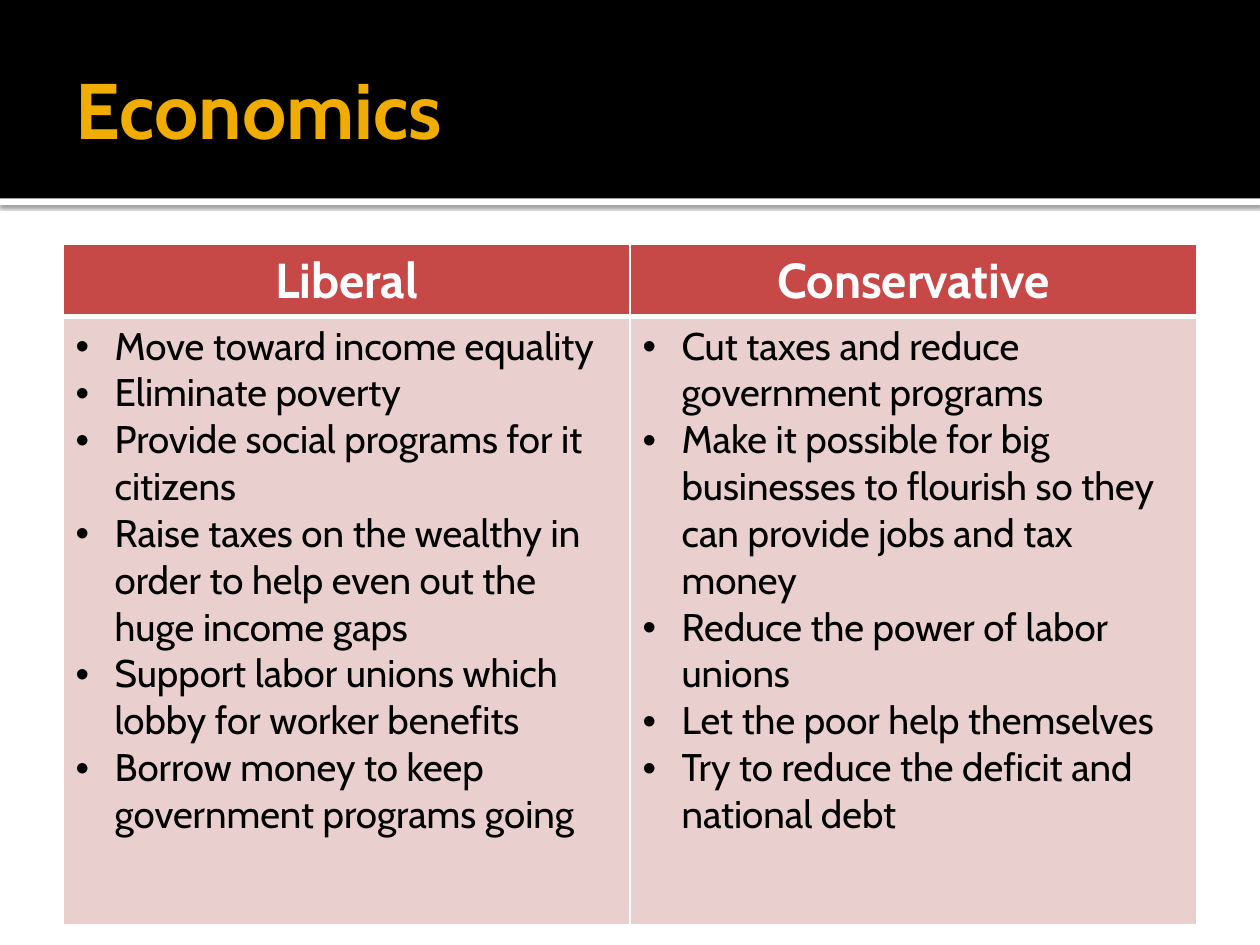
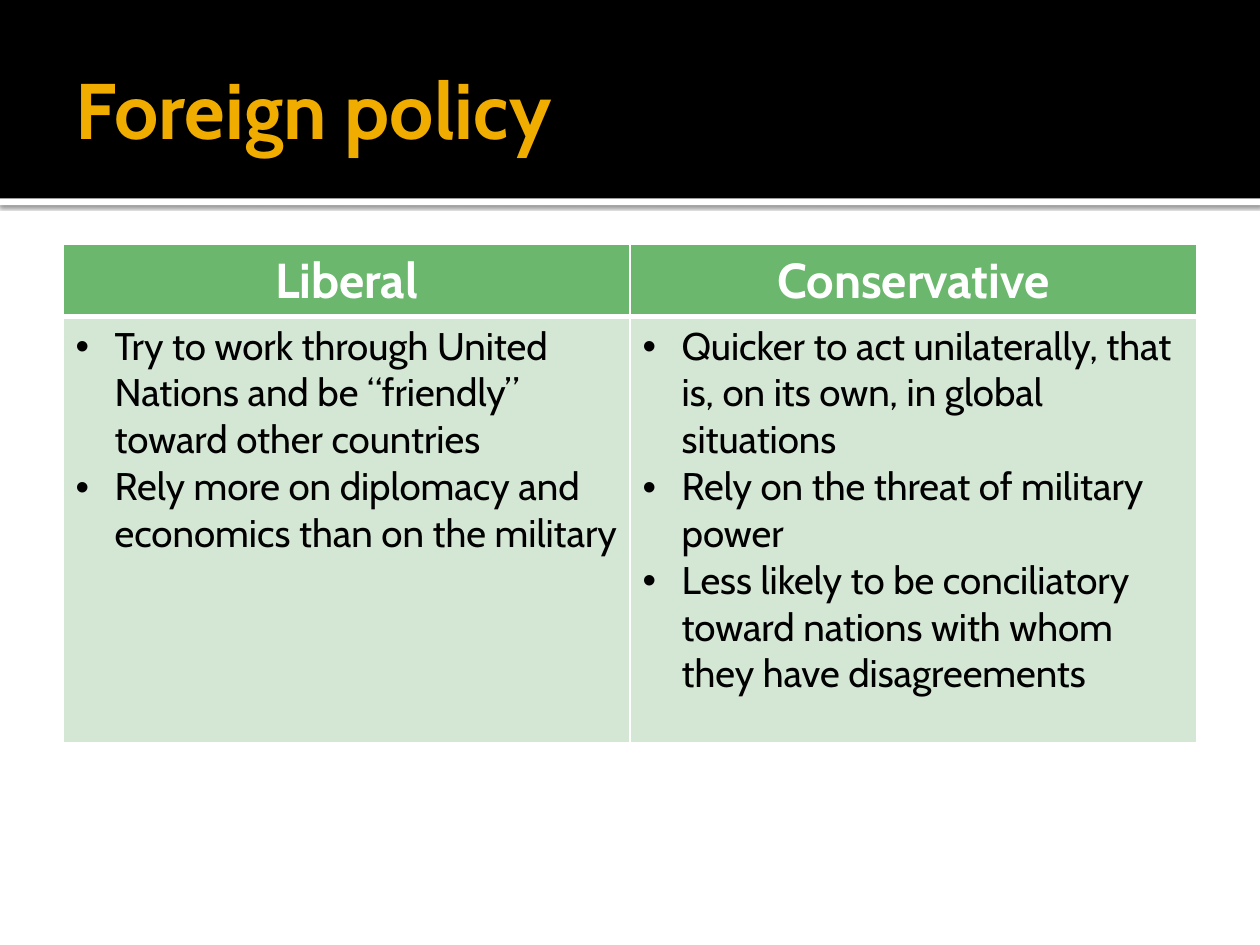
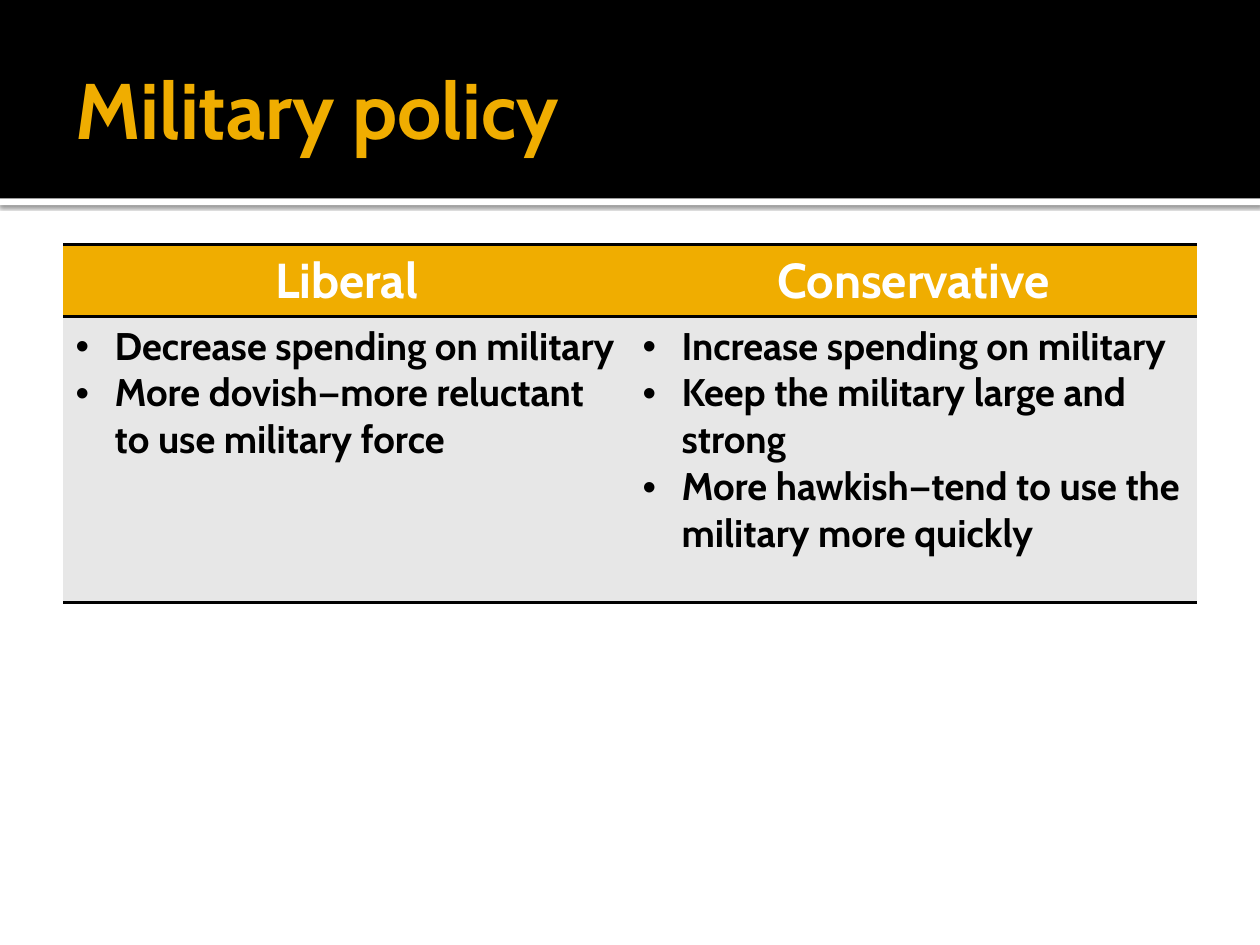
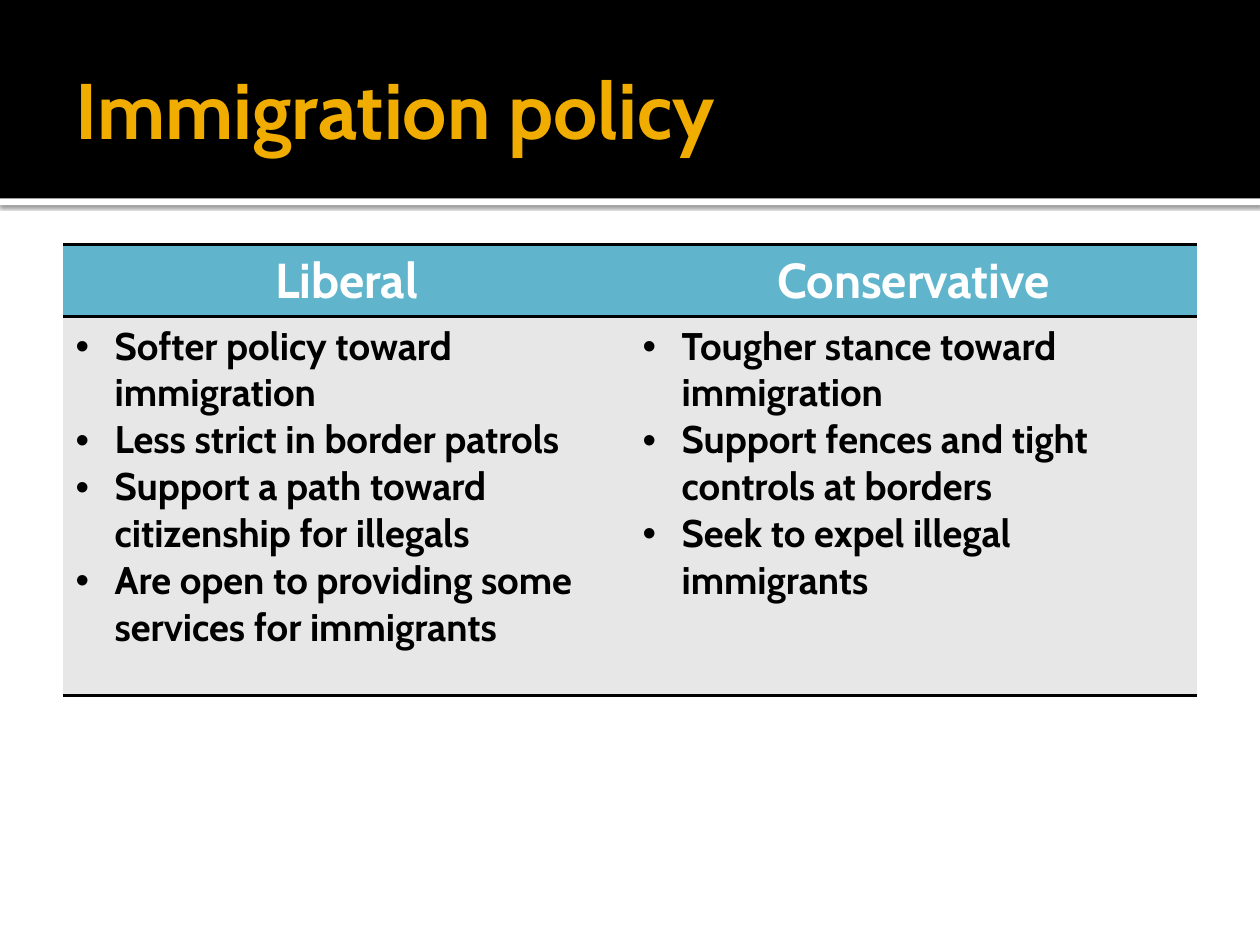
from lxml import etree
from pptx import Presentation
from pptx import util as u
from pptx.dml import color
from pptx.enum import shapes, text
from pptx.oxml import ns

WIDTH, HEIGHT = u.Inches(10), u.Inches(7.5)
FONT = "Cabin"
HEX = {
    "black": "000000", "white": "FFFFFF", "gold": "F0AD00",
    "red": "C64847", "pink": "EACFCF", "green": "6BB76D", "mint": "D4E6D4",
    "blue": "60B5CC", "grey": "E7E7E7",
}
MARGIN = 0.05
BAND = 0.21
TABLE_TOP = u.Inches(1.94)
HEADER_ROW = u.Inches(0.57)
INDENT = u.Inches(0.31)
SIDES = ("L", "R", "T", "B")
HEADINGS = ("Liberal", "Conservative")

TITLE_TEXT = {"size": u.Pt(45), "bold": True, "color": "gold"}
HEADER_TEXT = {"size": u.Pt(28), "bold": True, "color": "white"}
PLAIN_TEXT = {"size": u.Pt(22), "bold": False, "color": "black"}
BOLD_TEXT = {**PLAIN_TEXT, "bold": True}

THIN, THICK, RULE = ("white", 1), ("white", 3), ("black", 2)
GRID_LOOK = {
    "text": PLAIN_TEXT,
    "header": dict(zip(SIDES, (THIN, THIN, THIN, THICK))),
    "body": dict(zip(SIDES, (THIN, THIN, THICK, THIN))),
}
RULED_LOOK = {
    "text": BOLD_TEXT,
    "header": {"T": RULE, "B": RULE},
    "body": {"T": RULE, "B": RULE},
}

TOPICS = [
    {
        "title": "Economics", "look": GRID_LOOK, "fills": ("red", "pink"),
        "body_row": 4.83,
        "points": (
            ["Move toward income equality",
             "Eliminate poverty",
             "Provide social programs for it citizens",
             "Raise taxes on the wealthy in order to help even out the huge income gaps",
             "Support labor unions which lobby for worker benefits",
             "Borrow money to keep government programs going"],
            ["Cut taxes and reduce government programs",
             "Make it possible for big businesses to flourish so they can "
             "provide jobs and tax money",
             "Reduce the power of labor unions",
             "Let the poor help themselves",
             "Try to reduce the deficit and national debt"],
        ),
    },
    {
        "title": "Foreign policy", "look": GRID_LOOK, "fills": ("green", "mint"),
        "body_row": 3.38,
        "points": (
            ["Try to work through United Nations and be “friendly” toward other countries",
             "Rely more on diplomacy and economics than on the military"],
            ["Quicker to act unilaterally, that is, on its own, in global situations",
             "Rely on the threat of military power",
             "Less likely to be conciliatory toward nations with whom they have disagreements"],
        ),
    },
    {
        "title": "Military policy", "look": RULED_LOOK, "fills": ("gold", "grey"),
        "body_row": 2.27,
        "points": (
            ["Decrease spending on military",
             "More dovish—more reluctant to use military force"],
            ["Increase spending on military",
             "Keep the military large and strong",
             "More hawkish—tend to use the military more quickly"],
        ),
    },
    {
        "title": "Immigration policy", "look": RULED_LOOK, "fills": ("blue", "grey"),
        "body_row": 3.01,
        "points": (
            ["Softer policy toward immigration",
             "Less strict in border patrols",
             "Support a path toward citizenship for illegals",
             "Are open to providing some services for immigrants"],
            ["Tougher stance toward immigration",
             "Support fences and tight controls at borders",
             "Seek to expel illegal immigrants"],
        ),
    },
]


def rgb(name):
    """Return the named colour."""
    return color.RGBColor.from_string(HEX[name])


def add_node(parent, tag, **attributes):
    """Append a drawing element and return it."""
    node = etree.SubElement(parent, ns.qn(tag))
    for key, value in attributes.items():
        node.set(key, str(value))
    return node


def paint(item, name):
    """Fill a shape or cell with a named colour."""
    item.fill.solid()
    item.fill.fore_color.rgb = rgb(name)


def write(para, words, look):
    """Write one formatted run into a paragraph."""
    span = para.add_run()
    span.text = words
    for key, value in {"name": FONT, **look}.items():
        if key == "color":
            span.font.color.rgb = rgb(value)
        else:
            setattr(span.font, key, value)


def add_bullet(para):
    """Give a paragraph a hanging bullet."""
    props = para._p.get_or_add_pPr()
    props.set("marL", str(INDENT))
    props.set("indent", str(-INDENT))
    add_node(props, "a:buFont", typeface="Arial")
    add_node(props, "a:buChar", char="•")


def set_borders(cell, borders):
    """Draw the given sides of a cell and clear the others."""
    props = cell._tc.get_or_add_tcPr()
    for place, side in enumerate(SIDES):
        name, points = borders.get(side, (None, 0))
        line = etree.Element(ns.qn("a:ln" + side), w=str(u.Pt(points)))
        if name:
            add_node(add_node(line, "a:solidFill"), "a:srgbClr", val=HEX[name])
        else:
            add_node(line, "a:noFill")
        props.insert(place, line)


def add_band(slide, top, height, name):
    """Add a full-width band, with heights as shares of the slide."""
    band = slide.shapes.add_shape(
        shapes.MSO_SHAPE.RECTANGLE, 0, int(HEIGHT * top), WIDTH, int(HEIGHT * height))
    paint(band, name)
    band.line.fill.background()
    band.shadow.inherit = False
    return band


def cast_shadow(band):
    """Let a band cast a soft shadow downwards."""
    effects = band.element.spPr.find(ns.qn("a:effectLst"))
    shadow = add_node(effects, "a:outerShdw", blurRad=u.Pt(2.5), dist=u.Pt(0.8),
                      dir=90 * 60000, algn="tl", rotWithShape=0)
    tint = add_node(shadow, "a:srgbClr", val=HEX["black"])
    add_node(tint, "a:alpha", val=60000)


def share_bands(slide):
    """Build the header bands and move them to the slide's layout."""
    strip = add_band(slide, BAND, 0.007, "white")
    cast_shadow(strip)
    header = add_band(slide, 0, BAND, "black")
    tree = slide.slide_layout.shapes.element
    for place, band in enumerate((strip, header), start=2):
        tree.insert(place, band.element)


def set_title(slide, words):
    """Place and format the slide title."""
    title = slide.shapes.title
    places = {"left": MARGIN * WIDTH, "top": u.Inches(0.17),
              "width": (1 - 2 * MARGIN) * WIDTH, "height": u.Inches(1.37)}
    for key, value in places.items():
        setattr(title, key, int(value))
    frame = title.text_frame
    formats = {
        "vertical_anchor": text.MSO_ANCHOR.MIDDLE, "word_wrap": True,
        "auto_size": text.MSO_AUTO_SIZE.NONE, "margin_left": u.Inches(0.1),
        "margin_right": u.Inches(0.05), "margin_top": u.Inches(0.05),
        "margin_bottom": u.Inches(0.05),
    }
    for key, value in formats.items():
        setattr(frame, key, value)
    para = frame.paragraphs[0]
    para.alignment = text.PP_ALIGN.LEFT
    write(para, words, TITLE_TEXT)


def add_comparison(slide, topic):
    """Add the two-column table of opposing views."""
    look, body_row = topic["look"], u.Inches(topic["body_row"])
    table = slide.shapes.add_table(
        2, len(HEADINGS), int(MARGIN * WIDTH), TABLE_TOP,
        int((1 - 2 * MARGIN) * WIDTH), HEADER_ROW + body_row).table
    table.horz_banding = False
    table.rows[0].height, table.rows[1].height = HEADER_ROW, body_row
    for column, (heading, points) in enumerate(zip(HEADINGS, topic["points"])):
        header, body = table.cell(0, column), table.cell(1, column)
        for cell, name, part in zip((header, body), topic["fills"], ("header", "body")):
            paint(cell, name)
            set_borders(cell, look[part])
        para = header.text_frame.paragraphs[0]
        para.alignment = text.PP_ALIGN.CENTER
        write(para, heading, HEADER_TEXT)
        frame = body.text_frame
        for row, point in enumerate(points):
            para = frame.add_paragraph() if row else frame.paragraphs[0]
            add_bullet(para)
            write(para, point, look["text"])


def main():
    """Build and save the deck."""
    deck = Presentation()
    deck.slide_width, deck.slide_height = WIDTH, HEIGHT
    for topic in TOPICS:
        slide = deck.slides.add_slide(deck.slide_layouts.get_by_name("Title Only"))
        set_title(slide, topic["title"])
        add_comparison(slide, topic)
    share_bands(deck.slides[0])
    deck.save("out.pptx")


if __name__ == "__main__":
    main()
